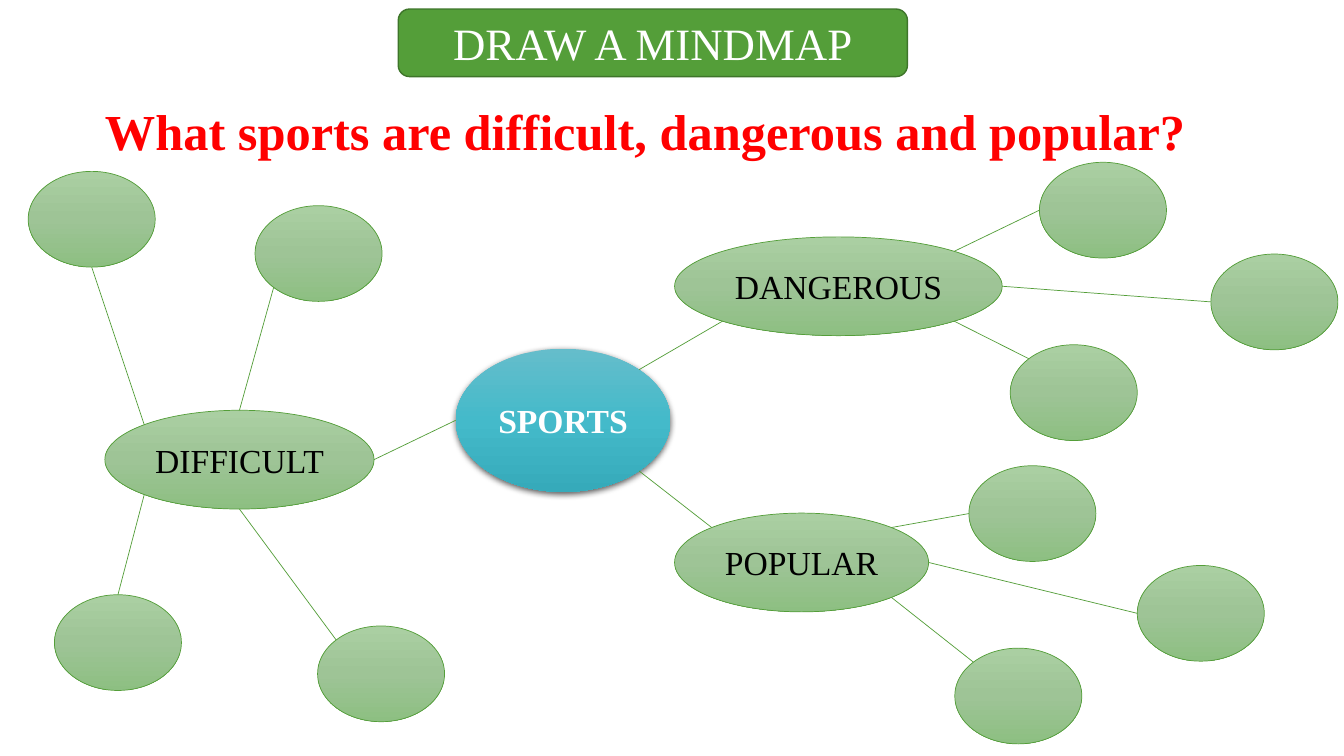
from copy import deepcopy
from dataclasses import dataclass
from math import cos, radians, sin

from lxml import etree
from pptx import Presentation
from pptx.dml.color import RGBColor
from pptx.enum.shapes import MSO_CONNECTOR, MSO_SHAPE
from pptx.enum.text import MSO_ANCHOR, MSO_AUTO_SIZE, PP_ALIGN
from pptx.oxml import parse_xml
from pptx.oxml.ns import nsdecls, qn
from pptx.util import Inches, Pt

OVAL, ROUNDED = MSO_SHAPE.OVAL, MSO_SHAPE.ROUNDED_RECTANGLE
STRAIGHT = MSO_CONNECTOR.STRAIGHT
LEFT, CENTER = PP_ALIGN.LEFT, PP_ALIGN.CENTER
TOP, MIDDLE = MSO_ANCHOR.TOP, MSO_ANCHOR.MIDDLE
NO_FIT = MSO_AUTO_SIZE.NONE

# Points on an oval, in degrees clockwise from the right
E, SE, S, SW, W, NW, N, NE = range(0, 360, 45)


@dataclass(frozen=True)
class Theme:
    font: str = "Times New Roman"
    banner_size: int = 32
    question_size: int = 36
    label_size: int = 24
    green: str = "549E39"
    dark_green: str = "3E752A"
    red: str = "FF0000"
    white: str = "FFFFFF"
    black: str = "000000"
    leaf_gradient: tuple = ("AACFA2", "9EC496", "8DBF82")
    hub_gradient: tuple = ("65BDCB", "44BACA", "36AABA")


THEME = Theme()


def write_text(shape, text, size, color, bold=False, align=CENTER, anchor=MIDDLE):
    frame = shape.text_frame
    frame.vertical_anchor = anchor
    frame.auto_size = NO_FIT
    para = frame.paragraphs[0]
    para.alignment = align
    span = para.add_run()
    span.text = text
    span.font.name = THEME.font
    span.font.size = Pt(size)
    span.font.bold = bold
    span.font.color.rgb = RGBColor.from_string(color)


def add_oval(page, box, gradient):
    """Add an oval with a three-colour gradient running from top to bottom."""
    oval = page.shapes.add_shape(OVAL, *map(Inches, box))
    oval.shadow.inherit = False
    oval.text_frame.word_wrap = False
    oval.fill.gradient()
    oval.fill.gradient_angle = 270
    stop_list = next(oval._element.spPr.iter(qn("a:gsLst")))
    stop_list.append(deepcopy(stop_list[-1]))
    for index, (stop, color) in enumerate(zip(oval.fill.gradient_stops, gradient)):
        stop.position = index / 2
        stop.color.rgb = RGBColor.from_string(color)
    oval.line.color.rgb = RGBColor.from_string(THEME.green)
    oval.line.width = Pt(0.5)
    return oval


deck = Presentation()
deck.slide_width, deck.slide_height = Inches(13.33), Inches(7.5)
page = deck.slides.add_slide(deck.slide_layouts[5])

# Question and banner
question = page.shapes.title
question.left, question.top = Inches(0.94), Inches(0.87)
question.width, question.height = Inches(11.07), Inches(0.71)
write_text(question, "What sports are difficult, dangerous and popular?",
           THEME.question_size, THEME.red, bold=True, align=LEFT, anchor=TOP)
question.text_frame.margin_top = Inches(0.12)
question.text_frame.margin_bottom = 0

banner = page.shapes.add_shape(ROUNDED, *map(Inches, (3.95, 0.09, 5.05, 0.67)))
banner.shadow.inherit = False
banner.fill.solid()
banner.fill.fore_color.rgb = RGBColor.from_string(THEME.green)
banner.line.color.rgb = RGBColor.from_string(THEME.dark_green)
banner.line.width = Pt(1)
write_text(banner, "DRAW A MINDMAP", THEME.banner_size, THEME.white)

# Hub of the mind map
hub_box = (4.52, 3.46, 2.13, 1.42)
hub = add_oval(page, hub_box, THEME.hub_gradient)
hub.line.fill.background()
write_text(hub, "SPORTS", THEME.label_size, THEME.white, bold=True)
hub._element.spPr.find(qn("a:effectLst")).append(parse_xml(
    f'<a:outerShdw {nsdecls("a")} blurRad="{Pt(4.5)}" dist="{Pt(1.5)}" dir="5400000" '
    f'rotWithShape="0"><a:srgbClr val="{THEME.black}"><a:alpha val="63000"/>'
    '</a:srgbClr></a:outerShdw>'))

# Label, box, hub point, branch point, leaves (left, top, branch point, leaf point)
branches = [
    ("DANGEROUS", (6.69, 2.35, 3.25, 0.98), NE, SW,
     [(10.31, 1.61, NE, W), (12.01, 2.52, E, W), (10.02, 3.42, SE, NW)]),
    ("POPULAR", (6.69, 5.09, 2.52, 0.98), SE, NW,
     [(9.61, 4.62, NE, W), (11.28, 5.61, E, W), (9.47, 6.43, SE, NW)]),
    ("DIFFICULT", (1.04, 4.07, 2.67, 0.98), W, E,
     [(2.53, 2.04, N, SW), (0.28, 1.7, NW, S),
      (3.15, 6.21, S, NW), (0.54, 5.9, SW, N)]),
]
links = []
for label, branch_box, hub_point, branch_point, leaves in branches:
    branch = add_oval(page, branch_box, THEME.leaf_gradient)
    write_text(branch, label, THEME.label_size, THEME.black)
    links.append(((hub_box, hub_point), (branch_box, branch_point)))
    for left, top, start_point, leaf_point in leaves:
        leaf_box = (left, top, 1.26, 0.95)
        add_oval(page, leaf_box, THEME.leaf_gradient)
        links.append(((branch_box, start_point), (leaf_box, leaf_point)))

# Lines between the ovals
for link in links:
    ends = []
    for (left, top, width, height), angle in link:
        ends.append(Inches(left + width / 2 * (1 + cos(radians(angle)))))
        ends.append(Inches(top + height / 2 * (1 + sin(radians(angle)))))
    line = page.shapes.add_connector(STRAIGHT, *ends)
    line.line.color.rgb = RGBColor.from_string(THEME.green)
    line.line.width = Pt(0.5)
    etree.SubElement(line._element.spPr, qn("a:effectLst"))

deck.save("out.pptx")
